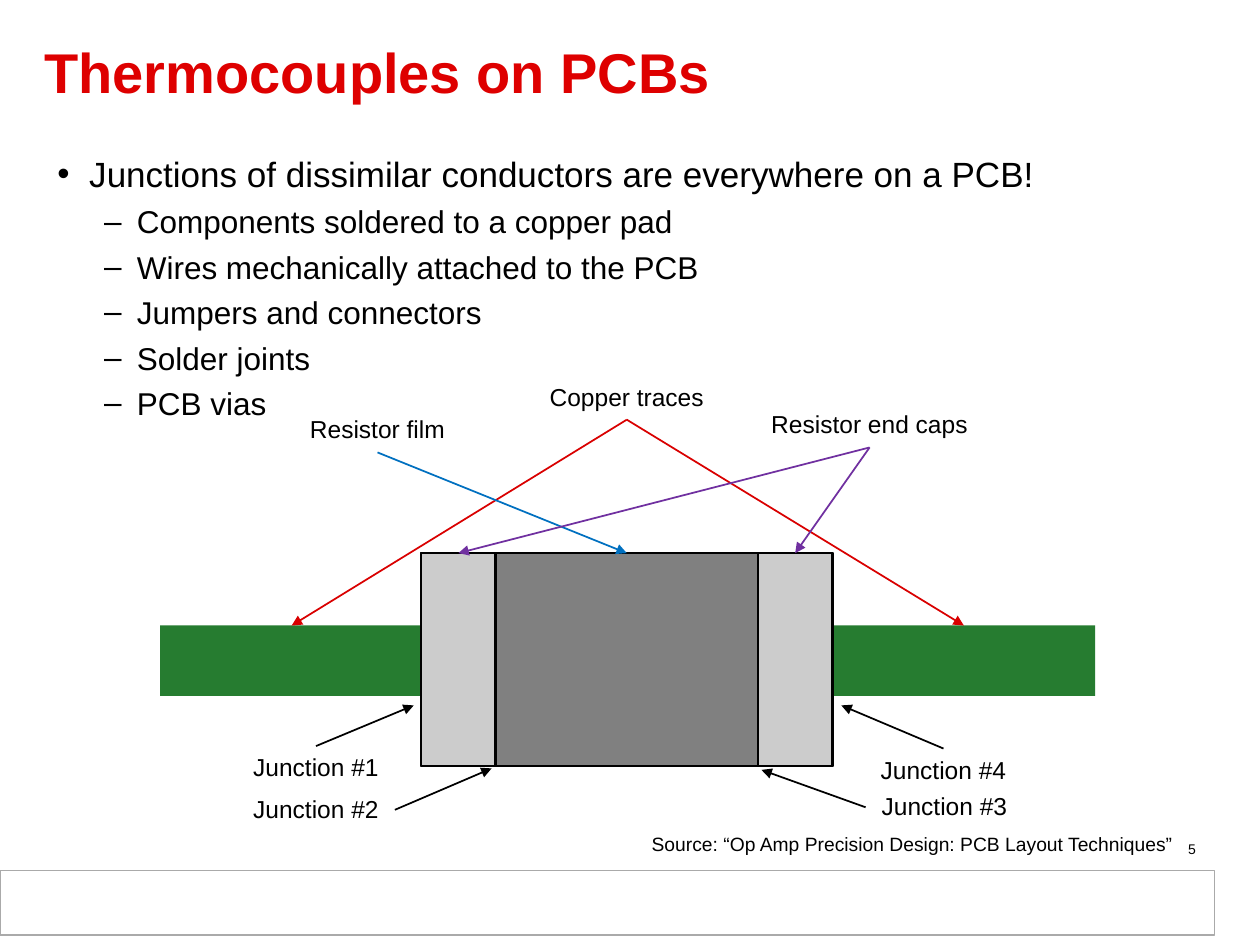
from lxml.etree import SubElement
from pptx import Presentation
from pptx.dml.color import RGBColor
from pptx.enum.shapes import MSO_CONNECTOR, MSO_SHAPE
from pptx.enum.text import MSO_ANCHOR, MSO_AUTO_SIZE, PP_ALIGN
from pptx.oxml.ns import qn
from pptx.util import Cm, Pt

BLACK = RGBColor(0x00, 0x00, 0x00)
WHITE = RGBColor(0xFF, 0xFF, 0xFF)
TITLE_RED = RGBColor(0xDE, 0x00, 0x00)
ARROW_RED = RGBColor(0xD9, 0x00, 0x00)
BLUE = RGBColor(0x00, 0x70, 0xC0)
PURPLE = RGBColor(0x70, 0x30, 0xA0)
GREEN = RGBColor(0x26, 0x7C, 0x30)
FILM_GRAY = RGBColor(0x80, 0x80, 0x80)
CAP_GRAY = RGBColor(0xCC, 0xCC, 0xCC)
BORDER_GRAY = RGBColor(0xAA, 0xAA, 0xAA)

LABEL_H = 0.89


def write(p, text, size=14, color=BLACK, bold=False, align=PP_ALIGN.LEFT):
    p.alignment = align
    r = p.add_run()
    r.text = text
    r.font.name = "Arial"
    r.font.size = Pt(size)
    r.font.bold = bold
    r.font.color.rgb = color


def add_text(s, text, x, y, w, h, fit=False, **fmt):
    tf = s.shapes.add_textbox(Cm(x), Cm(y), Cm(w), Cm(h)).text_frame
    tf.word_wrap = not fit
    if fit:
        tf.auto_size = MSO_AUTO_SIZE.SHAPE_TO_FIT_TEXT
    write(tf.paragraphs[0], text, **fmt)


def add_rect(s, x, y, w, h, fill, line=None, weight=1.5):
    sp = s.shapes.add_shape(MSO_SHAPE.RECTANGLE, Cm(x), Cm(y), Cm(w), Cm(h))
    sp.shadow.inherit = False
    sp.fill.solid()
    sp.fill.fore_color.rgb = fill
    if line is None:
        sp.line.fill.background()
    else:
        sp.line.color.rgb = line
        sp.line.width = Pt(weight)


def add_arrow(s, x1, y1, x2, y2, color):
    c = s.shapes.add_connector(MSO_CONNECTOR.STRAIGHT, Cm(x1), Cm(y1), Cm(x2), Cm(y2))
    c.line.color.rgb = color
    c.line.width = Pt(1)
    SubElement(c.line._get_or_add_ln(), qn("a:tailEnd"), type="triangle")
    SubElement(c._element.spPr, qn("a:effectLst"))


def add_bullet(p, char, margin, hang):
    pPr = p._p.get_or_add_pPr()
    pPr.set("marL", str(Cm(margin)))
    pPr.set("indent", str(-Cm(hang)))
    SubElement(pPr, qn("a:buFont"), typeface="Arial")
    SubElement(pPr, qn("a:buChar"), char=char)


def title(s, text, x, y, w, h):
    sp = s.shapes.title
    sp.left, sp.top, sp.width, sp.height = Cm(x), Cm(y), Cm(w), Cm(h)
    tf = sp.text_frame
    tf.vertical_anchor = MSO_ANCHOR.MIDDLE
    p = tf.paragraphs[0]
    p.line_spacing = 0.85
    write(p, text, size=32, color=TITLE_RED, bold=True)


def bullet_list(s, head, items, x, y, w, h):
    tf = s.shapes.add_textbox(Cm(x), Cm(y), Cm(w), Cm(h)).text_frame
    tf.word_wrap = True
    p = tf.paragraphs[0]
    add_bullet(p, "•", 0.64, 0.64)
    write(p, head, size=20)
    for item in items:
        p = tf.add_paragraph()
        p.level = 1
        add_bullet(p, "–", 1.6, 0.66)
        p.space_before = Pt(4.4)
        write(p, item, size=18)


def resistor_diagram(s, x, y):
    # Resistor body, relative to the corner of the diagram
    left, top, w, h, cap = x + 5.26, y + 3.58, 8.29, 4.29, 1.5
    right, bottom, mid = left + w, top + h, left + w / 2
    trace_w, trace_y = 5.3, y + 5.04
    add_rect(s, left, top, w, h, FILM_GRAY, BLACK)
    for trace_x in (x, right):
        add_rect(s, trace_x, trace_y, trace_w, 1.42, GREEN)
    for cap_x in (left, right - cap):
        add_rect(s, cap_x, top, cap, h, CAP_GRAY, BLACK)

    # Labels above, with arrows from the label's bottom to each part
    traces = [(x + trace_w / 2, trace_y), (right + trace_w / 2, trace_y)]
    caps = [(left + cap / 2, top), (right - cap / 2, top)]
    for text, cx, label_y, label_w, color, targets in (
        ("Copper traces", mid, y, 3.78, ARROW_RED, traces),
        ("Resistor film", x + 4.38, y + 0.66, 3.38, BLUE, [(mid, top)]),
        ("Resistor end caps", x + 14.3, y + 0.56, 4.67, PURPLE, caps),
    ):
        add_text(s, text, cx - label_w / 2, label_y, label_w, LABEL_H,
                 fit=True, align=PP_ALIGN.CENTER)
        for tx, ty in targets:
            add_arrow(s, cx, label_y + LABEL_H, tx, ty, color)

    # Junctions: outer ones point from the label's top, inner ones from its side
    label_w = 3.18
    for n, cx, dy, side, tip_x, tip_y in (
        (1, x + 3.14, 7.47, 0, left - 0.15, y + 6.65),
        (2, x + 3.14, 8.31, 1, left + cap - 0.08, bottom + 0.05),
        (4, x + 15.79, 7.52, 0, right + 0.18, y + 6.65),
        (3, x + 15.81, 8.26, -1, right - cap + 0.07, bottom + 0.08),
    ):
        label_y = y + dy
        add_text(s, f"Junction #{n}", cx - label_w / 2, label_y, label_w, LABEL_H,
                 fit=True, align=PP_ALIGN.CENTER)
        start_y = label_y + LABEL_H / 2 if side else label_y
        add_arrow(s, cx + side * label_w / 2, start_y, tip_x, tip_y, BLACK)


def footer(s, source, number, x, y, w, h):
    add_rect(s, x, y, w, h, WHITE, BORDER_GRAY, 0.75)
    add_text(s, number, x + 18.44, y - 0.74, 5.92, 0.58, size=8, align=PP_ALIGN.RIGHT)
    add_text(s, source, x + 12.62, y - 0.89, 11.28, 0.74, fit=True, size=11,
             align=PP_ALIGN.RIGHT)


def main():
    prs = Presentation()
    prs.slide_width, prs.slide_height = Cm(25.4), Cm(19.05)
    s = prs.slides.add_slide(prs.slide_layouts[5])
    title(s, "Thermocouples on PCBs", 0.64, 0.41, 23.5, 2.26)
    bullet_list(s, "Junctions of dissimilar conductors are everywhere on a PCB!", [
        "Components soldered to a copper pad",
        "Wires mechanically attached to the PCB",
        "Jumpers and connectors",
        "Solder joints",
        "PCB vias",
    ], 0.91, 2.95, 23.52, 13.7)
    resistor_diagram(s, 3.23, 7.57)
    footer(s, "Source: “Op Amp Precision Design: PCB Layout Techniques”", "5",
           0, 17.55, 24.49, 1.3)
    prs.save("out.pptx")


if __name__ == "__main__":
    main()
